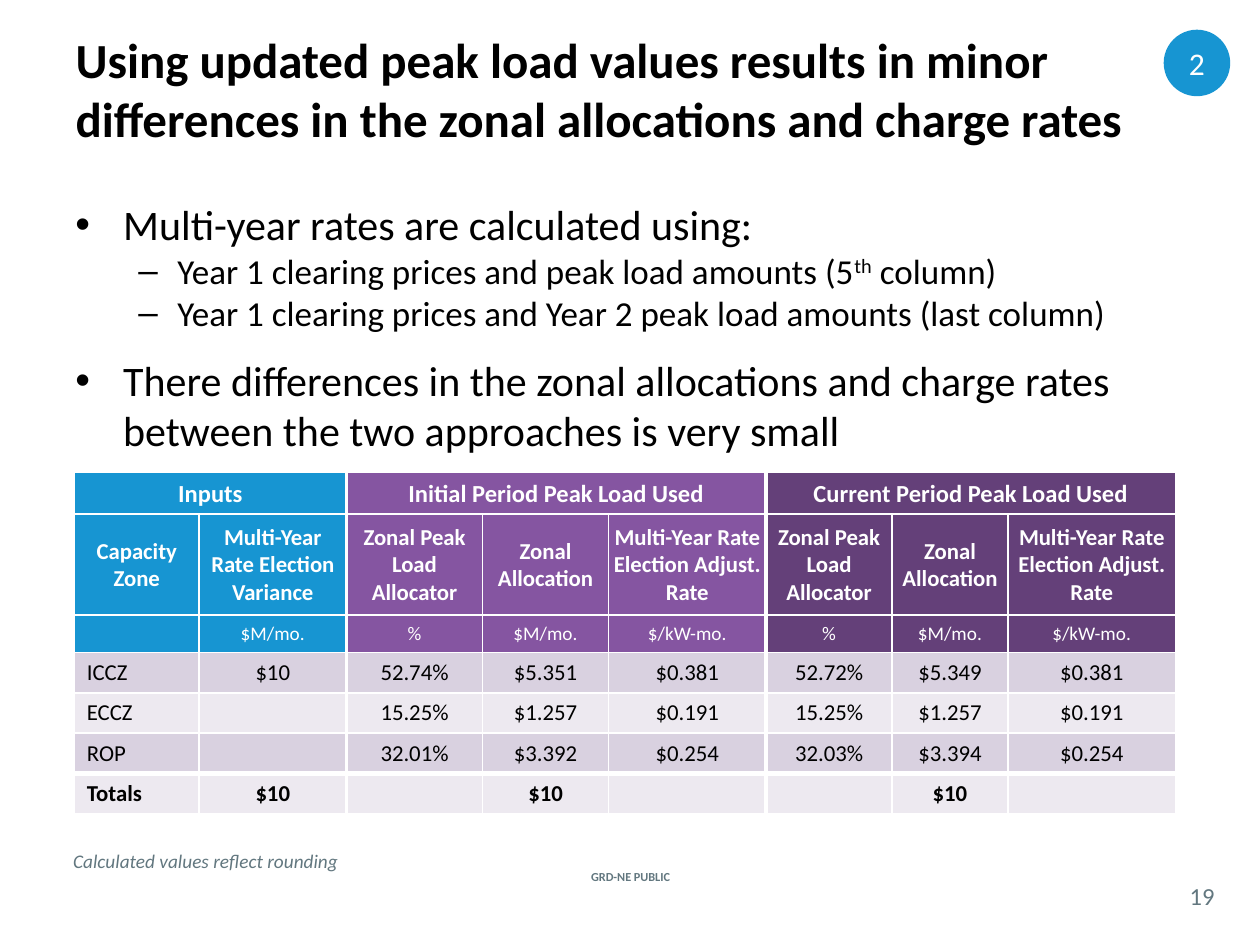
from lxml.etree import SubElement
from pptx import Presentation
from pptx.dml.color import RGBColor
from pptx.enum.shapes import MSO_SHAPE
from pptx.enum.text import MSO_ANCHOR, MSO_AUTO_SIZE, PP_ALIGN
from pptx.oxml.ns import qn
from pptx.util import Inches, Pt

FONT = "Calibri"
BLACK = RGBColor(0x00, 0x00, 0x00)
WHITE = RGBColor(0xFF, 0xFF, 0xFF)
GRAY = RGBColor(0x62, 0x77, 0x7F)
BLUE = RGBColor(0x17, 0x95, 0xD2)
PURPLE = RGBColor(0x85, 0x55, 0xA1)
DARK_PURPLE = RGBColor(0x64, 0x40, 0x79)
BAND = RGBColor(0xD9, 0xD1, 0xE0)
LIGHT_BAND = RGBColor(0xED, 0xE9, 0xF0)

TITLE = ("Using updated peak load values results in minor differences "
         "in the zonal allocations and charge rates")

# level, runs of (text, superscript percent)
BULLETS = [
    (0, [("Multi-year rates are calculated using:", 0)]),
    (1, [("Year 1 clearing prices and peak load amounts (5", 0), ("th", 30),
         (" column)", 0)]),
    (1, [("Year 1 clearing prices and Year 2 peak load amounts (last column)", 0)]),
    (0, [("There differences in the zonal allocations and charge rates "
          "between the two approaches is very small", 0)]),
]
# symbol, text indent, hanging indent, size, space before
LEVELS = [("•", 0.38, 0.38, 24, 12), ("–", 0.81, 0.31, 20, 0)]

# heading, columns spanned, fill
GROUPS = [
    ("Inputs", 2, BLUE),
    ("Initial Period Peak Load Used", 3, PURPLE),
    ("Current Period Peak Load Used", 3, DARK_PURPLE),
]
PERIOD_HEADS = ["Zonal Peak Load Allocator", "Zonal Allocation",
                "Multi-Year Rate Election Adjust. Rate"]
PERIOD_UNITS = ["%", "$M/mo.", "$/kW-mo."]
ROWS = [
    ["Inputs", "", "Initial Period Peak Load Used", "", "",
     "Current Period Peak Load Used", "", ""],
    ["Capacity Zone", "Multi-Year Rate Election Variance"] + PERIOD_HEADS * 2,
    ["", "$M/mo."] + PERIOD_UNITS * 2,
    ["ICCZ", "$10", "52.74%", "$5.351", "$0.381", "52.72%", "$5.349", "$0.381"],
    ["ECCZ", "", "15.25%", "$1.257", "$0.191", "15.25%", "$1.257", "$0.191"],
    ["ROP", "", "32.01%", "$3.392", "$0.254", "32.03%", "$3.394", "$0.254"],
    ["Totals", "$10", "", "$10", "", "", "$10", ""],
]
COLUMN_WIDTHS = [0.99, 1.17, 1.08, 1, 1.25, 1, 0.92, 1.33]
ROW_HEIGHTS = [0.33, 0.8, 0.3] + [0.32] * 4
HEAD_SIZES = [14, 13, 11]
BODY_SIZE = 13
TOTALS = len(ROWS) - 1


def add_run(para, text, size, color, bold=False, italic=False):
    span = para.add_run()
    span.text = text
    font = span.font
    font.name, font.size, font.bold, font.italic = FONT, Pt(size), bold, italic
    font.color.rgb = color
    return span


def add_label(page, bounds, text, size, align=PP_ALIGN.CENTER, **style):
    box = page.shapes.add_textbox(*map(Inches, bounds))
    frame = box.text_frame
    frame.word_wrap = True
    frame.vertical_anchor = MSO_ANCHOR.MIDDLE
    frame.margin_left = frame.margin_right = 0
    frame.margin_top = frame.margin_bottom = 0
    frame.paragraphs[0].alignment = align
    add_run(frame.paragraphs[0], text, size, GRAY, **style)


def add_title(page):
    title = page.shapes.title
    title.left, title.top = Inches(0.5), Inches(0.08)
    title.width, title.height = Inches(9), Inches(1.25)
    frame = title.text_frame
    frame.auto_size = MSO_AUTO_SIZE.NONE
    frame.vertical_anchor = MSO_ANCHOR.MIDDLE
    frame.paragraphs[0].alignment = PP_ALIGN.LEFT
    add_run(frame.paragraphs[0], TITLE, 28, BLACK, bold=True)


def add_bullets(page):
    box = page.shapes.add_textbox(Inches(0.5), Inches(1.53), Inches(9), Inches(2.2))
    frame = box.text_frame
    frame.word_wrap = True
    for index, (level, runs) in enumerate(BULLETS):
        symbol, indent, hanging, size, before = LEVELS[level]
        para = frame.add_paragraph() if index else frame.paragraphs[0]
        para.level = level
        properties = para._p.get_or_add_pPr()
        properties.set("marL", str(Inches(indent)))
        properties.set("indent", str(-Inches(hanging)))
        SubElement(properties, qn("a:buFont"), typeface="Arial")
        SubElement(properties, qn("a:buChar"), char=symbol)
        para.space_before = Pt(before if index else 0)
        for text, raised in runs:
            span = add_run(para, text, size, BLACK)
            if raised:
                span.font._element.set("baseline", str(raised * 1000))


def set_borders(cell, **widths):
    """Draw white borders; the keys are L, R, T and B, the values points."""
    properties = cell._tc.get_or_add_tcPr()
    for side, width in widths.items():
        line = SubElement(properties, qn(f"a:ln{side}"), w=str(Pt(width)))
        fill = SubElement(line, qn("a:solidFill"))
        SubElement(fill, qn("a:srgbClr"), val=str(WHITE))


def fill_cell(cell, row, column, last_column, head_fill, group_starts):
    is_head = row < len(HEAD_SIZES)
    set_borders(
        cell,
        L=2.25 if column in group_starts else 1,
        R=2.25 if last_column + 1 in group_starts else 1,
        T=3 if row == TOTALS else 1,
        B=3 if row == TOTALS - 1 else 1,
    )
    cell.fill.solid()
    cell.fill.fore_color.rgb = head_fill if is_head else (BAND if row % 2 else LIGHT_BAND)
    cell.vertical_anchor = MSO_ANCHOR.MIDDLE
    if row < 2:
        cell.margin_left = cell.margin_right = cell.margin_top = Inches(0.01)
        cell.margin_bottom = 0
    para = cell.text_frame.paragraphs[0]
    para.alignment = PP_ALIGN.LEFT if column == 0 and not is_head else PP_ALIGN.CENTER
    size = HEAD_SIZES[row] if is_head else BODY_SIZE
    if ROWS[row][column]:
        add_run(para, ROWS[row][column], size, WHITE if is_head else BLACK,
                bold=row in (0, 1, TOTALS))
    else:
        para.font.size = Pt(size)


def add_rate_table(page):
    table = page.shapes.add_table(
        len(ROWS), len(COLUMN_WIDTHS), Inches(0.59), Inches(3.75),
        Inches(sum(COLUMN_WIDTHS)), Inches(sum(ROW_HEIGHTS))).table
    for column, width in zip(table.columns, COLUMN_WIDTHS):
        column.width = Inches(width)
    for row, height in zip(table.rows, ROW_HEIGHTS):
        row.height = Inches(height)

    starts = [sum(span for _, span, _ in GROUPS[:i]) for i in range(len(GROUPS))]
    for start, (_, span, color) in zip(starts, GROUPS):
        end = start + span - 1
        table.cell(0, start).merge(table.cell(0, end))
        for row in range(len(ROWS)):
            for column in range(start, end + 1):
                fill_cell(table.cell(row, column), row, column,
                          end if row == 0 else column, color, starts[1:])


def add_badge(page):
    badge = page.shapes.add_shape(MSO_SHAPE.OVAL, Inches(9.25), Inches(0.25),
                                  Inches(0.5), Inches(0.5))
    badge.shadow.inherit = False
    badge.fill.solid()
    badge.fill.fore_color.rgb = BLUE
    badge.line.color.rgb = BLUE
    badge.line.width = Pt(2)
    frame = badge.text_frame
    frame.vertical_anchor = MSO_ANCHOR.MIDDLE
    frame.paragraphs[0].alignment = PP_ALIGN.CENTER
    add_run(frame.paragraphs[0], "2", 18, WHITE)


def main():
    deck = Presentation()
    deck.slide_width, deck.slide_height = Inches(10), Inches(7.5)
    page = deck.slides.add_slide(deck.slide_layouts.get_by_name("Title Only"))
    add_title(page)
    add_bullets(page)
    add_rate_table(page)
    add_badge(page)
    add_label(page, (0.58, 6.69, 2.69, 0.29), "Calculated values reflect rounding",
              11, PP_ALIGN.LEFT, italic=True)
    add_label(page, (4.27, 6.87, 1.47, 0.17), "GRD-NE PUBLIC", 7, bold=True)
    add_label(page, (9.33, 6.96, 0.42, 0.29), "19", 14)
    deck.save("out.pptx")


if __name__ == "__main__":
    main()
